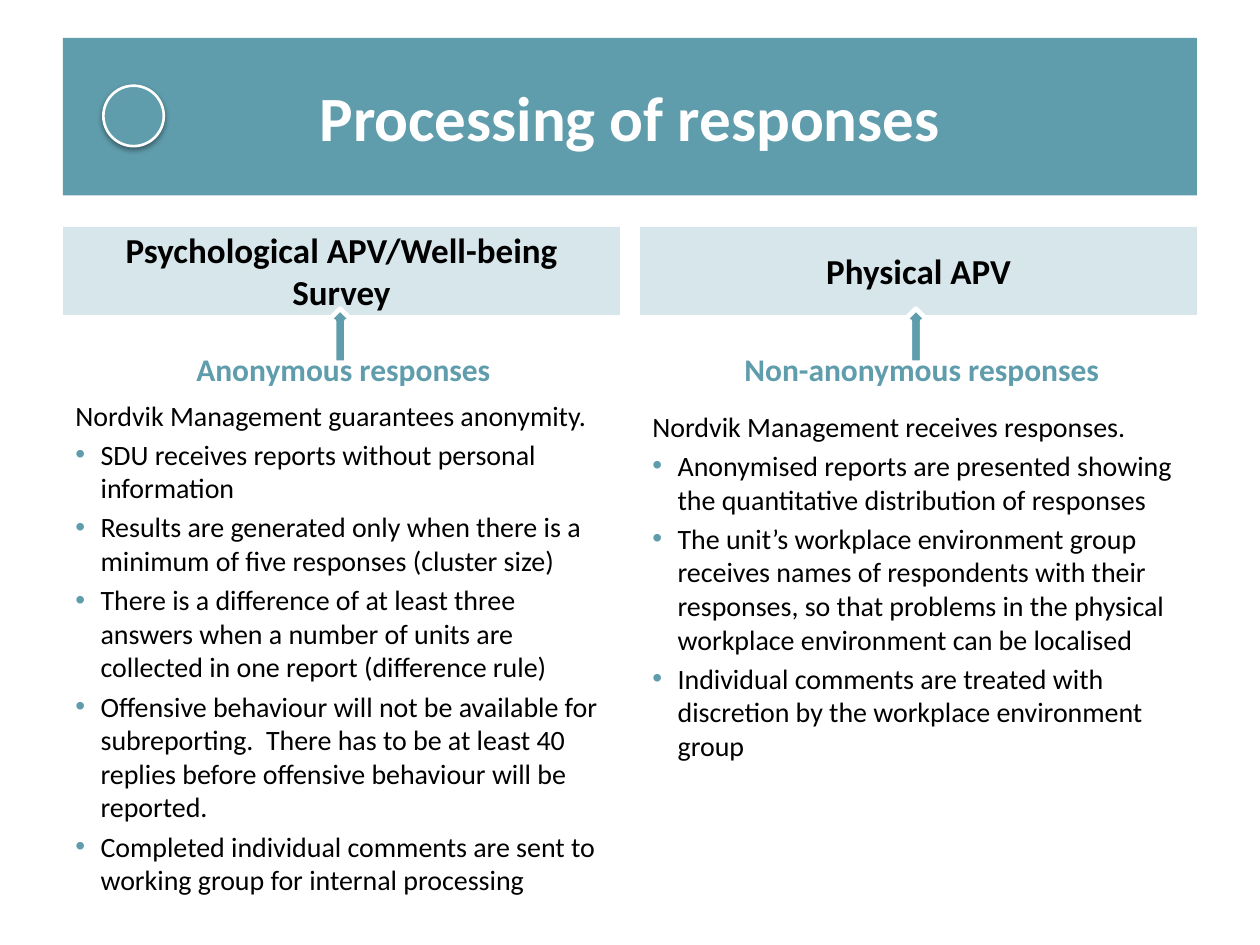
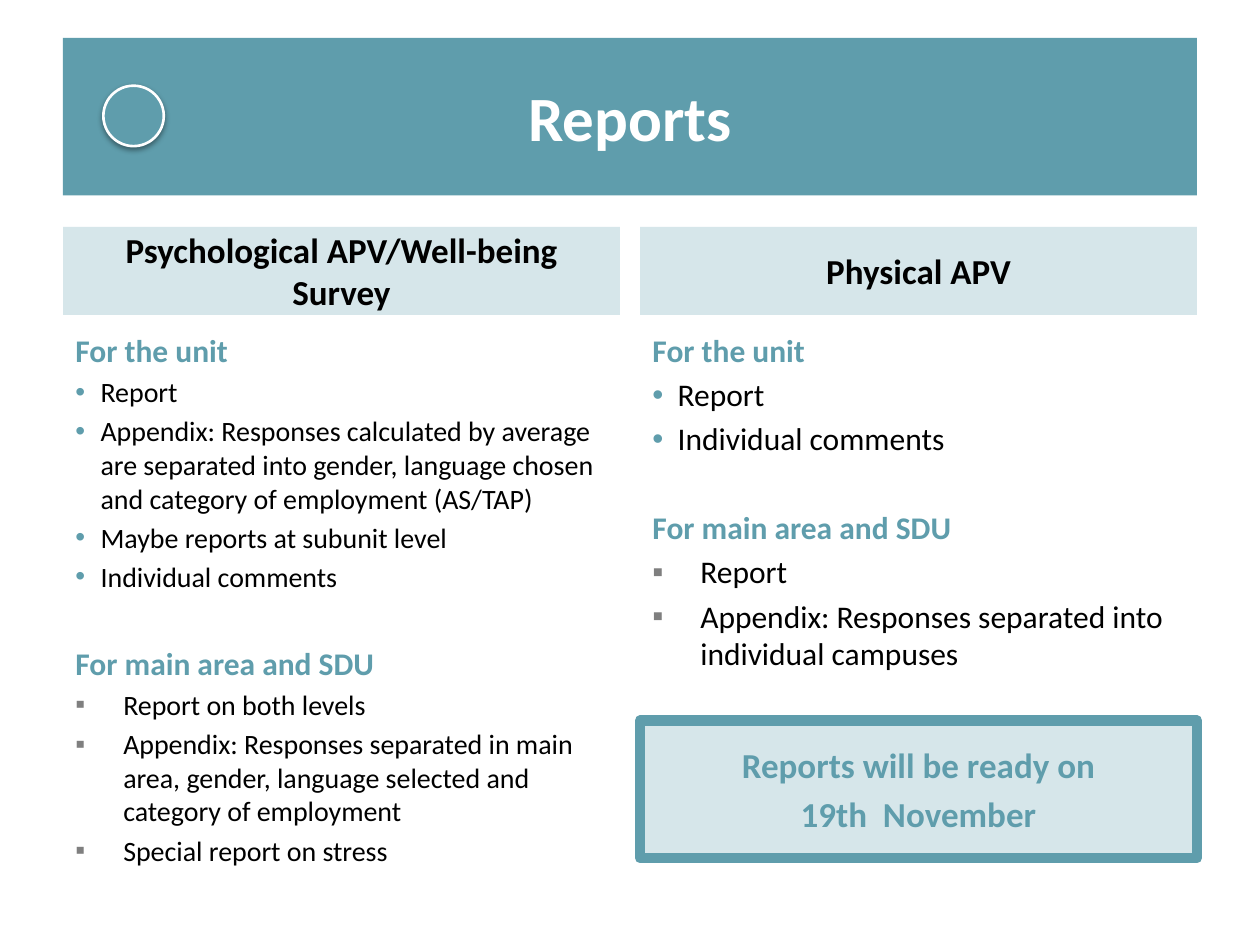
import pptx
import pptx.util
import pptx.dml.color
import pptx.enum.shapes
import pptx.enum.text
import pptx.oxml
import pptx.oxml.ns
from lxml import etree

RGBColor = pptx.dml.color.RGBColor
Inches, Pt = pptx.util.Inches, pptx.util.Pt
SHAPE = pptx.enum.shapes.MSO_SHAPE
ALIGN = pptx.enum.text.PP_ALIGN
ANCHOR = pptx.enum.text.MSO_ANCHOR

# Content: each column has a header, body lines (style, text) and its place
LEFT, RIGHT = "Psychological APV/Well-being Survey", "Physical APV"
SLIDES = [
    {
        "title": "Processing of responses",
        "cols": [
            {"head": LEFT, "top": 3.11, "size": 16, "lines": [
                ("plain", "Nordvik Management guarantees anonymity."),
                ("dot", "SDU receives reports without personal information"),
                ("dot", "Results are generated only when there is a minimum of "
                        "five responses (cluster size)"),
                ("dot", "There is a difference of at least three answers when a "
                        "number of units are collected in one report "
                        "(difference rule)"),
                ("dot", "Offensive behaviour will not be available for "
                        "subreporting.  There has to be at least 40 replies "
                        "before offensive behaviour will be reported."),
                ("dot", "Completed individual comments are sent to working "
                        "group for internal processing"),
            ]},
            {"head": RIGHT, "top": 3.2, "size": 16, "lines": [
                ("plain", "Nordvik Management receives responses."),
                ("dot", "Anonymised reports are presented showing the "
                        "quantitative distribution of responses"),
                ("dot", "The unit’s workplace environment group receives names "
                        "of respondents with their responses, so that problems "
                        "in the physical workplace environment can be localised"),
                ("dot", "Individual comments are treated with discretion by the "
                        "workplace environment group"),
            ]},
        ],
        # label, its left and width, left of its arrow
        "tags": [("Anonymous responses", 1.46, 2.84, 2.6),
                 ("Non-anonymous responses", 5.81, 3.37, 7.17)],
    },
    {
        "title": "Reports",
        "cols": [
            {"head": LEFT, "top": 2.58, "size": 16, "lines": [
                ("group", "For the unit"),
                ("dot", "Report"),
                ("dot", "Appendix: Responses calculated by average are separated "
                        "into gender, language chosen and category of "
                        "employment (AS/TAP)"),
                ("dot", "Maybe reports at subunit level"),
                ("dot", "Individual comments"),
                ("group", "For main area and SDU"),
                ("square", "Report on both levels"),
                ("square", "Appendix: Responses separated in main area, gender, "
                           "language selected and category of employment"),
                ("square", "Special report on stress"),
            ]},
            {"head": RIGHT, "top": 2.58, "size": 18, "lines": [
                ("group", "For the unit"),
                ("dot", "Report"),
                ("dot", "Individual comments"),
                ("group", "For main area and SDU"),
                ("square", "Report"),
                ("square", "Appendix: Responses separated into individual "
                           "campuses"),
            ]},
        ],
        "note": ["Reports will be ready on", "19th  November"],
    },
]

# Theme and grid
TEAL = RGBColor(0x5F, 0x9D, 0xAC)
GREY = RGBColor(0x7F, 0x7F, 0x7F)
BLACK = RGBColor(0, 0, 0)
WHITE = RGBColor(255, 255, 255)
FONT = "Calibri"
WIDE, HIGH = 10, 7.5
EDGE, GAP = 0.5, 0.16
COL = (WIDE - 2 * EDGE - GAP) / 2
FOOT = 6.7
GROUP = 18      # size of group heads and tags
LEAD = 0.2      # space before, as a share of the text size
BREAK = 29.2    # space before a later group head
MARKS = {"dot": ("•", TEAL, 0.2), "square": ("▪", GREY, 0.38)}


def add(parent, tag, **attrs):
    """Append a drawing element."""
    node = etree.SubElement(parent, pptx.oxml.ns.qn("a:" + tag))
    for key, val in attrs.items():
        node.set(key, str(val))
    return node


def block(slide, kind, box, fill=TEAL, line=None, width=0, clear=None):
    item = slide.shapes.add_shape(kind, *map(Inches, box))
    item.shadow.inherit = False
    item.fill.solid()
    item.fill.fore_color.rgb = fill
    if clear:
        tint = item.fill._xPr.find(".//" + pptx.oxml.ns.qn("a:srgbClr"))
        add(tint, "alpha", val=clear * 1000)
    if line is None:
        item.line.fill.background()
    else:
        item.line.color.rgb = line
        item.line.width = Pt(width)
    return item


def style(para, text, size, color, bold=False, align=ALIGN.LEFT, before=0):
    para.text = text
    para.alignment = align
    para.space_before = Pt(before)
    font = para.font
    font.name, font.size, font.bold = FONT, Pt(size), bold
    font.color.rgb = color


def mark(para, sign, color, indent):
    prop = para._p.get_or_add_pPr()
    prop.set("marL", str(Inches(indent)))
    prop.set("indent", str(-Inches(indent)))
    add(add(prop, "buClr"), "srgbClr", val=color)
    add(prop, "buFont", typeface="Arial")
    add(prop, "buChar", char=sign)


def paras(frame, lines):
    """Yield index, paragraph and line, making paragraphs as needed."""
    frame.word_wrap = True
    for num, line in enumerate(lines):
        yield num, frame.add_paragraph() if num else frame.paragraphs[0], line


def center(item, lines, size, color):
    frame = item.text_frame
    frame.vertical_anchor = ANCHOR.MIDDLE
    for num, para, line in paras(frame, lines):
        style(para, line, size, color, True, ALIGN.CENTER,
              LEAD * size if num else 0)


def textbox(slide, box):
    return slide.shapes.add_textbox(*map(Inches, box)).text_frame


def banner(slide, title):
    box = (EDGE, 0.3, WIDE - 2 * EDGE, 1.25)
    center(block(slide, SHAPE.RECTANGLE, box), [title], 36, WHITE)


def ring(slide):
    item = block(slide, SHAPE.OVAL, (0.82, 0.68, 0.48, 0.48), TEAL, WHITE, 1.5)
    effect = item._element.spPr.find(pptx.oxml.ns.qn("a:effectLst"))
    shade = add(effect, "outerShdw", blurRad=Pt(3.1), dist=Pt(1.6),
                dir=90 * 60000, rotWithShape=0)
    add(add(shade, "srgbClr", val="000000"), "alpha", val=38000)


def column(slide, left, col):
    head = block(slide, SHAPE.RECTANGLE, (left, 1.8, COL, 0.7), clear=25)
    center(head, [col["head"]], 20, BLACK)
    frame = textbox(slide, (left, col["top"], COL, FOOT - col["top"]))
    for num, para, (kind, text) in paras(frame, col["lines"]):
        group = kind == "group"
        size = GROUP if group else col["size"]
        before = 0 if not num else BREAK if group else LEAD * size
        if kind in MARKS:
            mark(para, *MARKS[kind])
        style(para, text, size, TEAL if group else BLACK, group, before=before)


def tag(slide, text, left, width, arrow):
    block(slide, SHAPE.UP_ARROW, (arrow, 2.45, 0.2, 0.43), TEAL, WHITE, 2.75)
    frame = textbox(slide, (left, 2.73, width, 0.4))
    frame.word_wrap = True
    style(frame.paragraphs[0], text, GROUP, TEAL, True)


def main():
    deck = pptx.Presentation()
    deck.slide_width, deck.slide_height = Inches(WIDE), Inches(HIGH)
    for data in SLIDES:
        slide = deck.slides.add_slide(deck.slide_layouts[6])
        banner(slide, data["title"])
        for num, col in enumerate(data["cols"]):
            column(slide, EDGE + num * (COL + GAP), col)
        for item in data.get("tags", []):
            tag(slide, *item)
        ring(slide)
        if "note" in data:
            box = (EDGE + COL + GAP, 5.72, COL, 1.09)
            note = block(slide, SHAPE.RECTANGLE, box, TEAL, TEAL, 6, 25)
            center(note, data["note"], 20, TEAL)
    deck.save("out.pptx")


if __name__ == "__main__":
    main()
